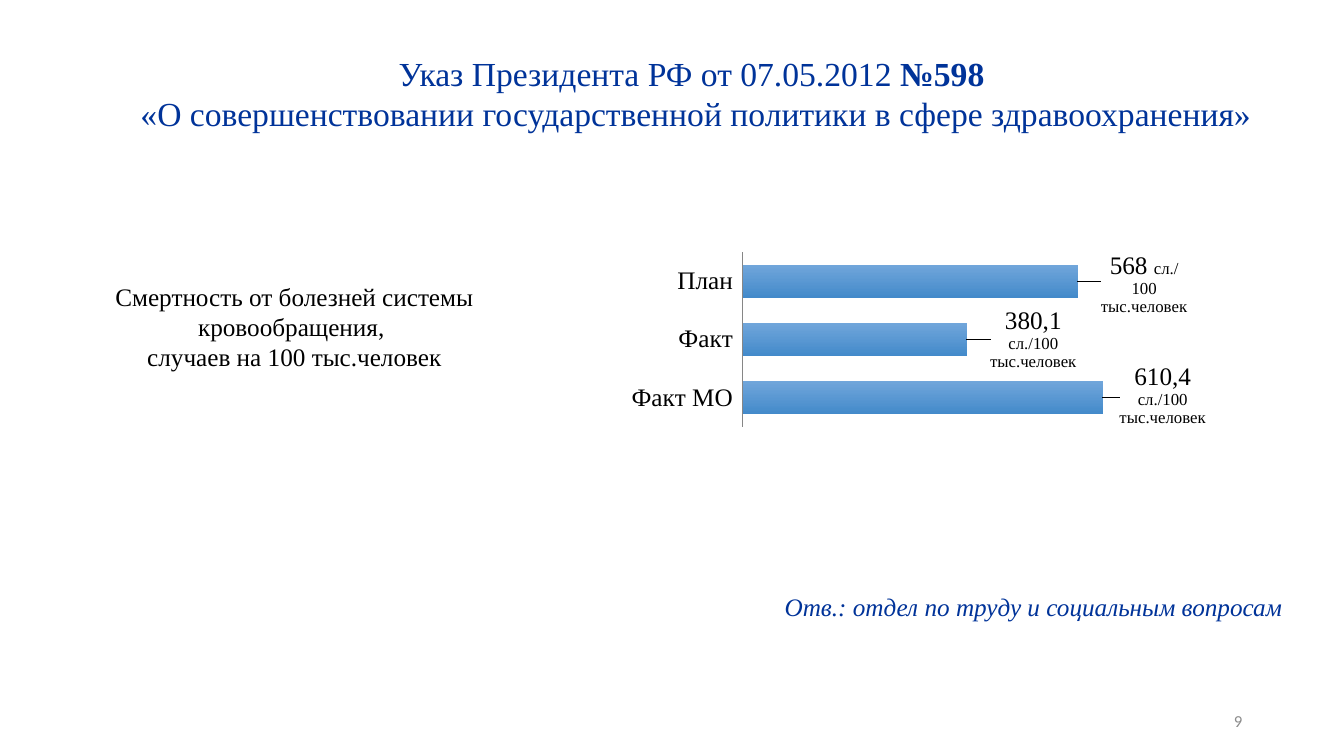
from dataclasses import dataclass

from lxml.etree import SubElement
from pptx import Presentation
from pptx.chart.data import CategoryChartData
from pptx.chart.series import BarSeries
from pptx.dml.color import RGBColor
from pptx.enum.chart import XL_CHART_TYPE as ChartType
from pptx.enum.chart import XL_LABEL_POSITION as LabelPosition
from pptx.enum.chart import XL_TICK_LABEL_POSITION as TickLabelPosition
from pptx.enum.chart import XL_TICK_MARK as TickMark
from pptx.enum.text import MSO_ANCHOR as Anchor
from pptx.enum.text import PP_ALIGN as Align
from pptx.oxml.ns import qn
from pptx.slide import Slide
from pptx.text.text import Font, TextFrame, _Paragraph as Paragraph
from pptx.util import Inches, Pt

SERIF = "Times New Roman"
SANS = "Calibri"
BLACK = "000000"
NAVY = "003399"
GREY = "8C8C8C"
AXIS_GREY = "868686"
BAR_TOP = "71A6DB"
BAR_BOTTOM = "438ACA"


@dataclass(frozen=True)
class Span:
    text: str
    size: float = 18
    color: str = BLACK
    font: str = SERIF
    bold: bool = False
    italic: bool = False


@dataclass(frozen=True)
class Note:
    left: float
    top: float
    width: float
    height: float
    lines: tuple[Span, ...]
    align: Align = Align.CENTER
    anchor: Anchor = Anchor.TOP


@dataclass(frozen=True)
class Bar:
    category: str
    value: float
    number: str
    unit: str
    shift_x: float
    shift_y: float


TITLE_LINES = (
    (
        Span("Указ Президента РФ от 07.05.2012 ", 24, NAVY),
        Span("№598 ", 24, NAVY, bold=True),
    ),
    (Span("«О совершенствовании государственной политики в сфере здравоохранения»", 24, NAVY),),
)
NOTES = (
    Note(9.42, 6.95, 3, 0.4, (Span("9", 12, GREY, SANS),), Align.RIGHT, Anchor.MIDDLE),
    Note(0.71, 2.74, 4.42, 1.01, (
        Span("Смертность от болезней системы кровообращения, "),
        Span("случаев на 100 тыс.человек"),
    )),
    Note(7.67, 5.82, 5.16, 0.71, (
        Span("Отв.: отдел по труду и социальным вопросам", 18, NAVY, italic=True),
    )),
)
BARS = (
    Bar("Факт МО", 610.4, "610,4 ", "сл./100 тыс.человек", 0.02, -0.01),
    Bar("Факт", 380.1, "380,1 ", "сл./100 тыс.человек", 0.03, 0),
    Bar("План", 568, "568 ", "сл./100 тыс.человек", 0.03, 0.01),
)


def rgb(color: str) -> RGBColor:
    return RGBColor.from_string(color)


def style_font(font: Font, span: Span) -> None:
    font.name = span.font
    font.size = Pt(span.size)
    font.bold = span.bold
    font.italic = span.italic
    font.color.rgb = rgb(span.color)


def add_span(para: Paragraph, span: Span) -> None:
    run = para.add_run()
    run.text = span.text
    style_font(run.font, span)


def add_title(page: Slide) -> None:
    title = page.shapes.title
    title.left, title.top = Inches(0.69), Inches(0.47)
    title.width, title.height = Inches(12.42), Inches(0.91)
    frame = title.text_frame
    frame.word_wrap = True
    frame.vertical_anchor = Anchor.TOP
    para = frame.paragraphs[0]
    para.alignment = Align.CENTER
    para.line_spacing = 1
    for index, line in enumerate(TITLE_LINES):
        if index:
            para.add_line_break()
        for span in line:
            add_span(para, span)


def add_note(page: Slide, note: Note) -> None:
    box = page.shapes.add_textbox(
        Inches(note.left), Inches(note.top), Inches(note.width), Inches(note.height)
    )
    frame: TextFrame = box.text_frame
    frame.word_wrap = True
    frame.vertical_anchor = note.anchor
    for index, span in enumerate(note.lines):
        para = frame.add_paragraph() if index else frame.paragraphs[0]
        para.alignment = note.align
        add_span(para, span)


def add_layout(parent, **values: float | str):
    layout = SubElement(parent, qn("c:layout"))
    manual = SubElement(layout, qn("c:manualLayout"))
    for tag, value in values.items():
        SubElement(manual, qn(f"c:{tag}")).set("val", str(value))
    return layout


def label_bar(series: BarSeries, index: int, bar: Bar) -> None:
    label = series.points[index].data_label
    para = label.text_frame.paragraphs[0]
    add_span(para, Span(bar.number))
    add_span(para, Span(bar.unit, 12))
    label.position = LabelPosition.OUTSIDE_END
    element = series.data_labels._element.findall(qn("c:dLbl"))[index]
    layout = add_layout(element, x=bar.shift_x, y=bar.shift_y)
    element.find(qn("c:idx")).addnext(layout)


def add_bar_chart(page: Slide) -> None:
    data = CategoryChartData(number_format="#,##0.0")
    data.categories = [bar.category for bar in BARS]
    data.add_series("Series 1", [bar.value for bar in BARS])
    chart = page.shapes.add_chart(
        ChartType.BAR_CLUSTERED, Inches(6.12), Inches(2.21), Inches(6.33), Inches(2.71), data
    ).chart
    chart.has_legend = False
    chart.has_title = False
    style_font(chart.font, Span("", font=SANS))

    categories = chart.category_axis
    categories.major_tick_mark = categories.minor_tick_mark = TickMark.NONE
    categories.tick_label_position = TickLabelPosition.LOW
    categories.format.line.color.rgb = rgb(AXIS_GREY)
    style_font(categories.tick_labels.font, Span(""))

    values = chart.value_axis
    values.minimum_scale, values.maximum_scale = 0, 700
    values.has_major_gridlines = False
    values.tick_labels.number_format = "0.00"
    values.tick_labels.number_format_is_linked = False
    values.visible = False

    plot = chart.plots[0]
    plot.gap_width = 75
    plot.vary_by_categories = False
    series = plot.series[0]
    series.invert_if_negative = False
    fill = series.format.fill
    fill.gradient()
    fill.gradient_angle = 270
    for stop, color in zip(fill.gradient_stops, (BAR_TOP, BAR_BOTTOM)):
        stop.color.rgb = rgb(color)

    labels = series.data_labels
    labels.show_value = True
    labels.number_format = "#,##0.0"
    labels.number_format_is_linked = False
    style_font(labels.font, Span(""))
    for index, bar in enumerate(BARS):
        label_bar(series, index, bar)

    area = chart._chartSpace.chart.plotArea
    for layout in area.findall(qn("c:layout")):
        area.remove(layout)
    area.insert(0, add_layout(
        area, layoutTarget="inner", xMode="edge", yMode="edge",
        x=0.197, y=0.108, w=0.647, h=0.639,
    ))


def main() -> None:
    deck = Presentation()
    deck.slide_width, deck.slide_height = Inches(13.33), Inches(7.5)
    page = deck.slides.add_slide(deck.slide_layouts[5])
    add_title(page)
    for note in NOTES:
        add_note(page, note)
    add_bar_chart(page)
    deck.save("out.pptx")


if __name__ == "__main__":
    main()
